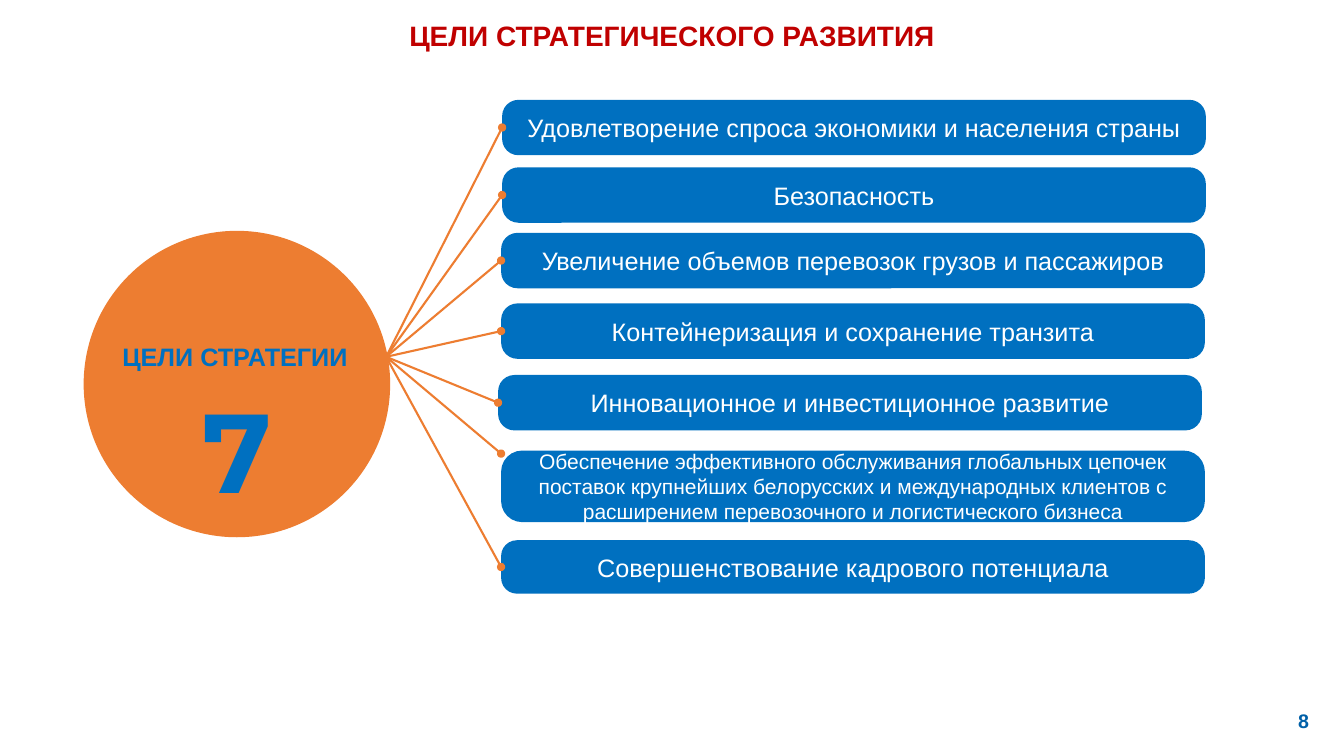
from lxml.etree import SubElement
from pptx import Presentation
from pptx.dml.color import RGBColor
from pptx.enum.shapes import MSO_CONNECTOR, MSO_SHAPE
from pptx.enum.text import MSO_ANCHOR, MSO_AUTO_SIZE, PP_ALIGN
from pptx.oxml.ns import qn
from pptx.util import Inches, Pt

BLUE = RGBColor(0x00, 0x70, 0xC0)
NUMBER_BLUE = RGBColor(0x00, 0x60, 0xA8)
ORANGE = RGBColor(0xED, 0x7D, 0x31)
RED = RGBColor(0xC0, 0x00, 0x00)
WHITE = RGBColor(0xFF, 0xFF, 0xFF)

GOAL_WIDTH = 6.98
HUB = (3.83, 3.54)

GOALS = [
    ("Удовлетворение спроса экономики и населения страны", 4.98, 0.99, 0.55, 18),
    ("Безопасность", 4.98, 1.66, 0.55, 18),
    ("Увеличение объемов перевозок грузов и пассажиров", 4.97, 2.31, 0.55, 18),
    ("Контейнеризация и сохранение транзита", 4.97, 3.01, 0.55, 18),
    ("Инновационное и инвестиционное развитие", 4.94, 3.72, 0.55, 18),
    ("Обеспечение эффективного обслуживания глобальных цепочек поставок "
     "крупнейших белорусских и международных клиентов с расширением "
     "перевозочного и логистического бизнеса", 4.97, 4.47, 0.71, 15),
    ("Совершенствование кадрового потенциала", 4.97, 5.36, 0.53, 18),
]
LINE_ENDS = {5: 4.5}


def write(shape, text, size, color, bold=True, font="Arial",
          anchor=MSO_ANCHOR.MIDDLE, wrap=True):
    frame = shape.text_frame
    frame.word_wrap = wrap
    frame.auto_size = MSO_AUTO_SIZE.NONE
    frame.vertical_anchor = anchor
    frame.text = text
    paragraph = frame.paragraphs[0]
    paragraph.alignment = PP_ALIGN.CENTER
    paragraph.font.name = font
    paragraph.font.size = Pt(size)
    paragraph.font.bold = bold
    paragraph.font.color.rgb = color


def add_filled(kind, left, top, width, height, color):
    shape = slide.shapes.add_shape(
        kind, Inches(left), Inches(top), Inches(width), Inches(height))
    shape.shadow.inherit = False
    shape.fill.solid()
    shape.fill.fore_color.rgb = color
    shape.line.fill.background()
    return shape


presentation = Presentation()
presentation.slide_width = Inches(13.33)
presentation.slide_height = Inches(7.5)
slide = presentation.slides.add_slide(presentation.slide_layouts[5])

title = slide.shapes.title
title.left, title.top = 0, Inches(0.04)
title.width, title.height = presentation.slide_width, Inches(0.63)
write(title, "ЦЕЛИ СТРАТЕГИЧЕСКОГО РАЗВИТИЯ", 20, RED)

for text, left, top, height, size in GOALS:
    goal = add_filled(MSO_SHAPE.ROUNDED_RECTANGLE, left, top, GOAL_WIDTH, height, BLUE)
    goal.adjustments[0] = 0.295
    write(goal, text, size, WHITE, bold=False)

for index, (text, left, top, height, size) in enumerate(GOALS):
    end_y = LINE_ENDS.get(index, top + height / 2)
    ray = slide.shapes.add_connector(
        MSO_CONNECTOR.STRAIGHT, Inches(HUB[0]), Inches(HUB[1]), Inches(left), Inches(end_y))
    ray.line.color.rgb = ORANGE
    ray.line.width = Pt(1.5)
    properties = ray.line._get_or_add_ln()
    SubElement(properties, qn("a:tailEnd"), type="oval")
    SubElement(properties.getparent(), qn("a:effectLst"))

add_filled(MSO_SHAPE.OVAL, 0.83, 2.29, 3.04, 3.04, ORANGE)

LABELS = [
    ("ЦЕЛИ СТРАТЕГИИ", 0.82, 3.34, 3.02, 0.4, 18, BLUE, "Arial", MSO_ANCHOR.TOP, True),
    ("7", 1.88, 3.74, 0.95, 1.45, 80, BLUE, "Montserrat", MSO_ANCHOR.TOP, False),
    ("8", 12.72, 6.99, 0.42, 0.32, 14, NUMBER_BLUE, "Arial", MSO_ANCHOR.MIDDLE, True),
]
for text, left, top, width, height, size, color, font, anchor, wrap in LABELS:
    label = slide.shapes.add_textbox(Inches(left), Inches(top), Inches(width), Inches(height))
    write(label, text, size, color, font=font, anchor=anchor, wrap=wrap)

presentation.save("out.pptx")
